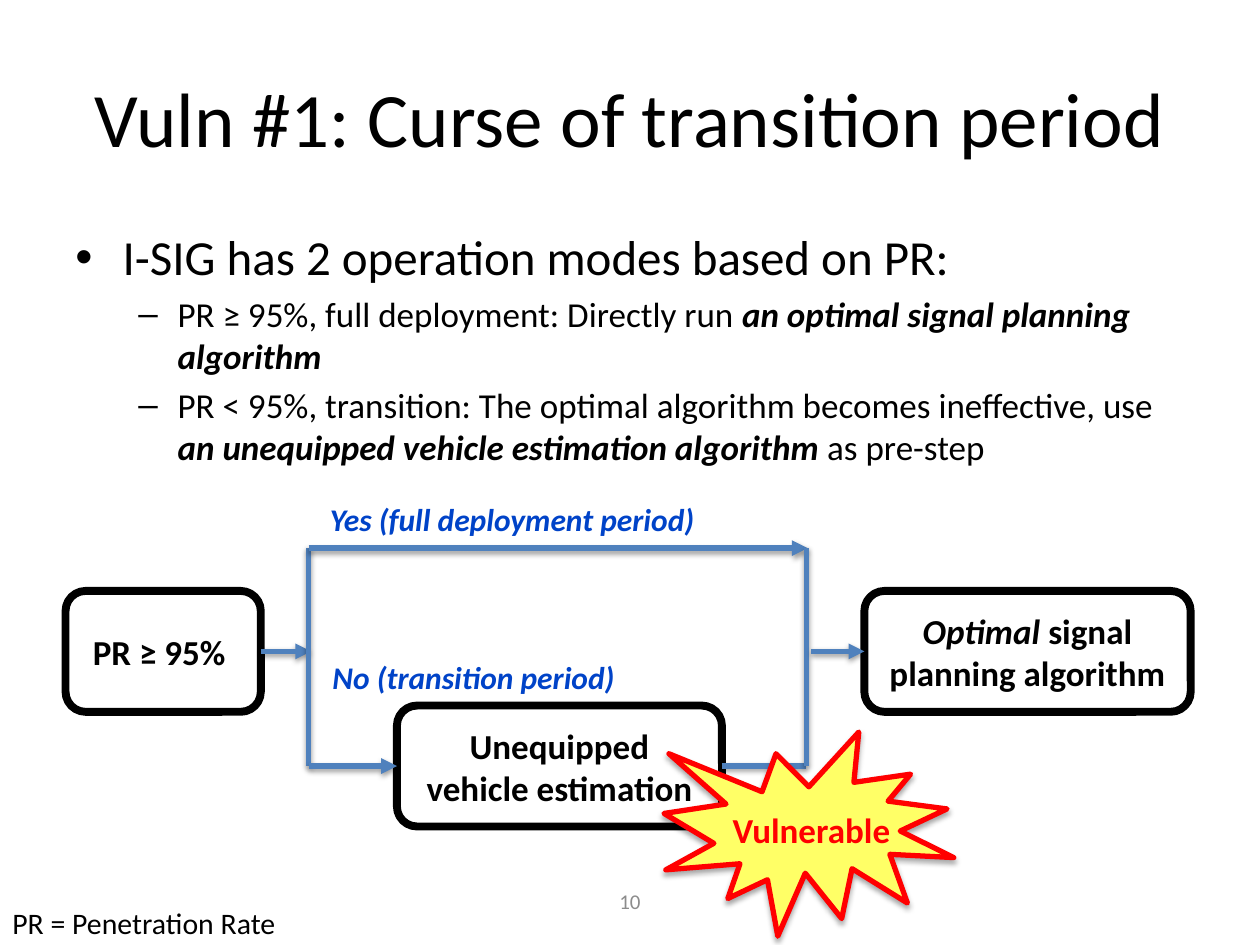
from lxml.etree import SubElement
from pptx import Presentation
from pptx.dml.color import RGBColor
from pptx.enum.shapes import MSO_CONNECTOR, MSO_SHAPE
from pptx.enum.text import MSO_ANCHOR as ANCHOR, PP_ALIGN as ALIGN
from pptx.oxml.ns import qn
from pptx.util import Inches, Pt

color = RGBColor.from_string
BLACK, BLUE, RED, LABEL_BLUE = "000000", "4F81BD", "FF0000", "0043C8"

presentation = Presentation()
presentation.slide_width, presentation.slide_height = Inches(10), Inches(7.5)
slide = presentation.slides.add_slide(presentation.slide_layouts[6])
shapes = slide.shapes
CELL = presentation.slide_width / 100  # grid of 100 columns by 75 rows


def on_grid(*cells):
    """Turn columns and rows of the grid into slide lengths."""
    return [round(cell * CELL) for cell in cells]


def write(shape, runs, size, ink=BLACK, bold=None, italic=None,
          align=ALIGN.CENTER, anchor=ANCHOR.MIDDLE, wrap=True, new=False):
    """Put (text, emphasised) runs in the first or a new paragraph."""
    frame = shape.text_frame
    frame.word_wrap, frame.vertical_anchor = wrap, anchor
    paragraph = frame.add_paragraph() if new else frame.paragraphs[0]
    paragraph.alignment = align
    font = paragraph.font
    font.name, font.size, font.bold, font.italic = "Calibri", Pt(size), bold, italic
    font.color.rgb = color(ink)
    for text, emphasised in runs:
        run = paragraph.add_run()
        run.text = text
        if emphasised:
            run.font.italic = True
            run.font.bold = True
    return paragraph


# Title, page number and footnote
for text, box, size, ink, align in [
    ("Vuln #1: Curse of transition period", (5, 3, 90, 12.5), 44, BLACK, ALIGN.CENTER),
    ("10", (5, 69.5, 90, 4), 12, "8C8C8C", ALIGN.CENTER),
    ("PR = Penetration Rate", (0, 71.5, 100, 3.5), 17, BLACK, ALIGN.LEFT),
]:
    write(shapes.add_textbox(*on_grid(*box)), [(text, False)], size, ink, align=align)

# Bulleted list
body = shapes.add_textbox(*on_grid(5, 17.5, 90, 49.5))
bullets = [
    (0, [("I-SIG has 2 operation modes based on PR:", False)]),
    (1, [("PR ≥ 95%, full deployment: Directly run ", False),
         ("an optimal signal planning algorithm", True)]),
    (1, [("PR < 95%, transition: The optimal algorithm becomes ineffective, use ", False),
         ("an unequipped vehicle estimation algorithm", True),
         (" as pre-step", False)]),
]
level_styles = [(28, 3.75, 3.75, "•"), (20, 8.12, 3.12, "–")]
for index, (level, runs) in enumerate(bullets):
    size, margin, hanging, mark = level_styles[level]
    paragraph = write(body, runs, size, align=ALIGN.LEFT, anchor=ANCHOR.TOP, new=index > 0)
    paragraph.level = level
    paragraph.space_before = Pt(size * 0.2)
    properties = paragraph._p.get_or_add_pPr()
    left, indent = on_grid(margin, -hanging)
    properties.set("marL", str(left))
    properties.set("indent", str(indent))
    bullet_font = SubElement(properties, qn("a:buFont"), typeface="Arial")
    bullet_font.addnext(properties.makeelement(qn("a:buChar"), char=mark))
    # bullets come before the default run properties
    defaults = properties.find(qn("a:defRPr"))
    if defaults is not None:
        properties.append(defaults)

# Flow boxes
boxes = {}
for name, box, runs in [
    ("check", (5.2, 46.9, 15.5, 9.6), [("PR ≥ 95% ", False)]),
    ("estimate", (31.5, 56, 25.8, 9.6), [("Unequipped vehicle estimation", False)]),
    ("plan", (68.6, 46.9, 25.9, 9.6),
     [("Optimal", True), (" signal planning algorithm", False)]),
]:
    shape = shapes.add_shape(MSO_SHAPE.ROUNDED_RECTANGLE, *on_grid(*box))
    shape.shadow.inherit = False
    shape.fill.background()
    shape.line.color.rgb, shape.line.width = color(BLACK), Pt(4.5)
    write(shape, runs, 20, bold=True)
    boxes[name] = shape

# Flow lines: start, end, arrowhead, box at the start, box at the end
SPLIT, JOIN, YES, MIDDLE, NO = 24.5, 64, 43.5, 51.7, 60.8
shadowed = []
for start, end, arrow, source, target in [
    ((20.7, MIDDLE), (SPLIT + 0.2, MIDDLE), True, "check", None),
    ((SPLIT, YES), (SPLIT, NO), False, None, None),
    ((SPLIT, YES), (JOIN + 0.1, YES), True, None, None),
    ((SPLIT, NO), (31.5, NO), True, None, "estimate"),
    ((57.3, NO), (JOIN, NO), False, "estimate", None),
    ((JOIN, YES), (JOIN, NO), False, None, None),
    ((JOIN + 0.4, MIDDLE), (68.6, MIDDLE), True, None, "plan"),
]:
    connector = shapes.add_connector(MSO_CONNECTOR.STRAIGHT, *on_grid(*start, *end))
    connector.line.color.rgb, connector.line.width = color(BLUE), Pt(3)
    if source:
        connector.begin_connect(boxes[source], 3)
    if target:
        connector.end_connect(boxes[target], 1)
    if arrow:
        SubElement(connector.line._get_or_add_ln(), qn("a:tailEnd"), type="triangle")
    shadowed.append((connector, 1.6, 38))

# Branch labels
for text, box in [("Yes (full deployment period)", (25.2, 39.2, 31.9, 4)),
                  ("No (transition period)", (25.4, 51.7, 25.5, 4))]:
    write(shapes.add_textbox(*on_grid(*box)), [(text, False)], 18, LABEL_BLUE,
          bold=True, italic=True, align=ALIGN.LEFT, anchor=ANCHOR.TOP, wrap=False)

# Warning burst
burst = shapes.add_shape(MSO_SHAPE.EXPLOSION1, *on_grid(52.7, 58.1, 23, 16.2))
burst.fill.solid()
burst.fill.fore_color.rgb = color("FFFF66")
burst.line.color.rgb, burst.line.width = color(RED), Pt(3)
shadowed.append((burst, 1.8, 35))
write(shapes.add_textbox(*on_grid(55.8, 63.7, 17.2, 4.4)), [("Vulnerable", False)],
      20, RED, bold=True, anchor=ANCHOR.TOP)

# Soft shadows below the lines and the burst
for shape, distance, opacity in shadowed:
    effects = SubElement(shape._element.spPr, qn("a:effectLst"))
    shadow = SubElement(effects, qn("a:outerShdw"), blurRad=str(Pt(3.1)),
                        dist=str(Pt(distance)), dir="5400000", rotWithShape="0")
    shade = SubElement(shadow, qn("a:srgbClr"), val=BLACK)
    SubElement(shade, qn("a:alpha"), val=str(opacity * 1000))

presentation.save("out.pptx")
